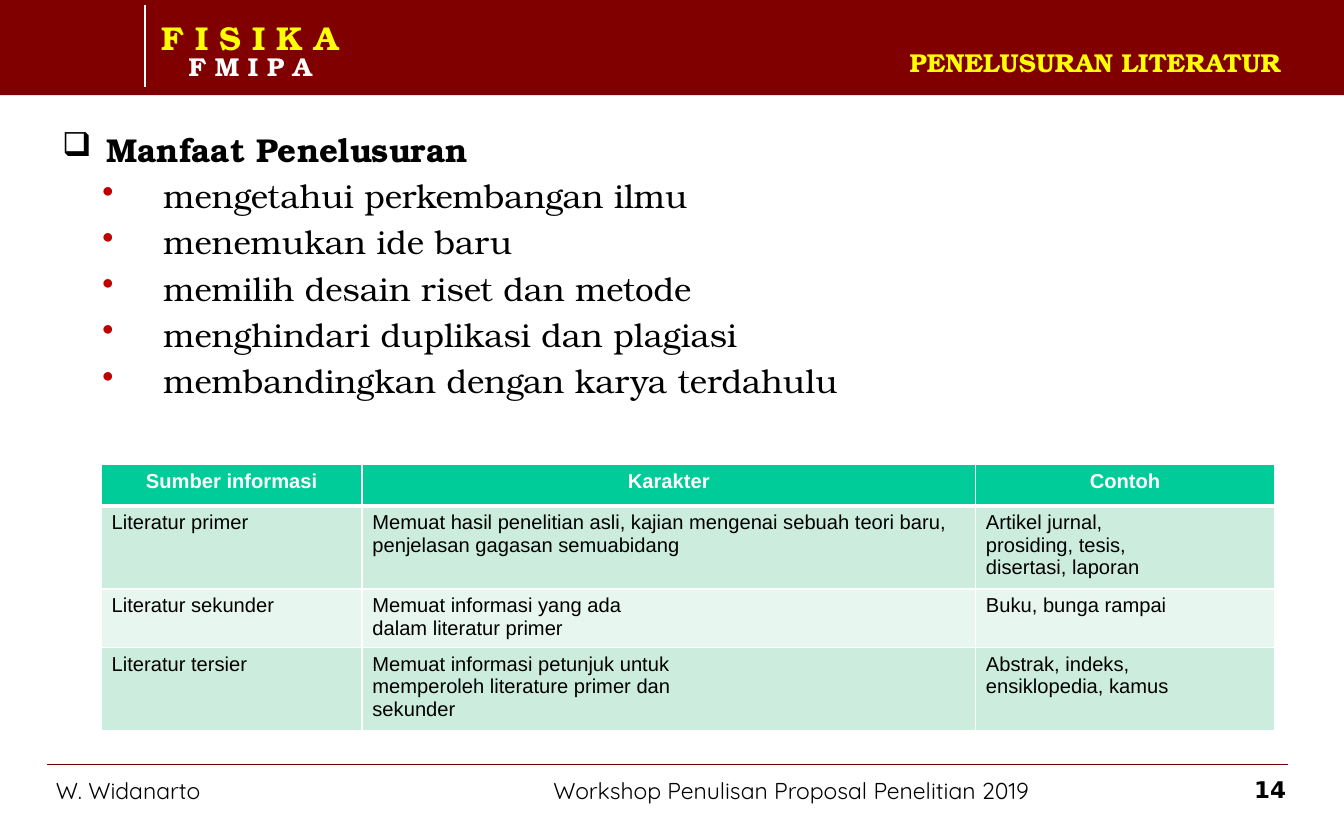
"""Build the literature-search slide with its benefits list and source table."""
from dataclasses import dataclass

from lxml.etree import SubElement
from pptx import Presentation
from pptx.dml.color import RGBColor as RGB
from pptx.enum.shapes import MSO_CONNECTOR as Connector, MSO_SHAPE as Shape
from pptx.enum.text import MSO_ANCHOR as Anchor, PP_ALIGN as Align
from pptx.oxml.ns import qn
from pptx.util import Inches, Pt


@dataclass(frozen=True)
class Theme:
    maroon: str = "800000"
    rule: str = "640000"
    yellow: str = "FFFF00"
    white: str = "FFFFFF"
    black: str = "000000"
    bullet: str = "C00000"
    header: str = "00CC99"
    bands: tuple = ("CCECDE", "E7F6EF")
    serif: str = "TeX Gyre Bonum"
    sans: str = "Arial"
    footer: str = "Quicksand"
    number: str = "DejaVu Sans"
    large: int = 23
    medium: int = 18
    small: int = 16
    cell: int = 14


theme = Theme()


def write(frame, text, *, font, size, color=theme.black, bold=False, align=Align.LEFT,
          spacing=None, before=0, bullet=None, bullet_color=theme.black, indent=(0, 0)):
    """Write one paragraph, filling the first one while it is empty."""
    line = frame.paragraphs[0]
    if line.runs:
        line = frame.add_paragraph()
        line.space_before = Pt(before)
    if bullet:
        props = line._p.get_or_add_pPr()
        props.set("marL", str(Inches(indent[0])))
        props.set("indent", str(Inches(indent[1])))
        SubElement(SubElement(props, qn("a:buClr")), qn("a:srgbClr"), val=bullet_color)
        SubElement(props, qn("a:buChar"), char=bullet)
    line.alignment = align
    if spacing:
        line.line_spacing = spacing
    run = line.add_run()
    run.text = text
    run.font.name, run.font.size, run.font.bold = font, Pt(size), bold
    run.font.color.rgb = RGB.from_string(color)


def add_frame(left, top, width, height, margins=(0.11, 0.06), wrap=True):
    """Add a text box and return its text frame."""
    frame = slide.shapes.add_textbox(*map(Inches, (left, top, width, height))).text_frame
    frame.margin_left = frame.margin_right = Inches(margins[0])
    frame.margin_top = frame.margin_bottom = Inches(margins[1])
    frame.word_wrap = wrap
    return frame


deck = Presentation()
deck.slide_width, deck.slide_height = Inches(12.99), Inches(8.03)
slide = deck.slides.add_slide(deck.slide_layouts[6])

banner = slide.shapes.add_shape(Shape.RECTANGLE, Inches(-0.01), 0, Inches(13.01), Inches(0.92))
banner.shadow.inherit = False
banner.fill.solid()
banner.fill.fore_color.rgb = RGB.from_string(theme.maroon)
banner.line.fill.background()

for ends, color, weight in [((0.45, 7.39, 12.45, 7.39), theme.rule, 1),
                            ((1.4, 0.05, 1.4, 0.84), theme.white, 1.5)]:
    rule = slide.shapes.add_connector(Connector.STRAIGHT, *map(Inches, ends))
    rule.line.color.rgb = RGB.from_string(color)
    rule.line.width = Pt(weight)
    SubElement(rule._element.spPr, qn("a:effectLst"))

department = add_frame(1.56, 0.24, 1.73, 0.55, margins=(0, 0), wrap=False)
write(department, "F I S I K A", font=theme.serif, size=theme.large, color=theme.yellow,
      bold=True, spacing=0.8)
write(department, "F M I P A", font=theme.serif, size=theme.medium, color=theme.white,
      bold=True, align=Align.CENTER, spacing=0.8)

title = add_frame(4.92, 0.33, 7.57, 0.54)
title.vertical_anchor = Anchor.MIDDLE
write(title, "PENELUSURAN LITERATUR", font=theme.serif, size=theme.medium,
      color=theme.yellow, bold=True, align=Align.RIGHT)

benefits = add_frame(0.49, 1.19, 11.99, 3.1)
write(benefits, "Manfaat Penelusuran", font=theme.serif, size=theme.large, bold=True,
      bullet="❑", indent=(0.43, -0.43))
for benefit in ["mengetahui perkembangan ilmu", "menemukan ide baru",
                "memilih desain riset dan metode", "menghindari duplikasi dan plagiasi",
                "membandingkan dengan karya terdahulu"]:
    write(benefits, benefit, font=theme.serif, size=theme.large, before=4.6,
          bullet="•", bullet_color=theme.bullet, indent=(0.98, -0.59))

sources = [
    ["Sumber informasi", "Karakter", "Contoh"],
    ["Literatur primer",
     "Memuat hasil penelitian asli, kajian mengenai sebuah teori baru, "
     "penjelasan gagasan semuabidang",
     "Artikel jurnal,\nprosiding, tesis,\ndisertasi, laporan"],
    ["Literatur sekunder", "Memuat informasi yang ada\ndalam literatur primer",
     "Buku, bunga rampai"],
    ["Literatur tersier",
     "Memuat informasi petunjuk untuk\nmemperoleh literature primer dan\nsekunder",
     "Abstrak, indeks,\nensiklopedia, kamus"],
]
column_widths = [2.52, 5.93, 2.89]
row_heights = [0.4, 0.76, 0.54, 0.76]
table = slide.shapes.add_table(len(sources), len(column_widths), Inches(0.98), Inches(4.49),
                               Inches(sum(column_widths)), Inches(sum(row_heights))).table
for column, width in zip(table.columns, column_widths):
    column.width = Inches(width)
for row, height in zip(table.rows, row_heights):
    row.height = Inches(height)

for r, entries in enumerate(sources):
    is_header = r == 0
    borders = {"lnL": 1, "lnR": 1, "lnT": 3 if r == 1 else 1, "lnB": 3 if is_header else 1}
    for c, entry in enumerate(entries):
        cell = table.cell(r, c)
        for side, weight in borders.items():
            edge = SubElement(cell._tc.get_or_add_tcPr(), qn(f"a:{side}"), w=str(Pt(weight)))
            SubElement(SubElement(edge, qn("a:solidFill")), qn("a:srgbClr"), val=theme.white)
        cell.fill.solid()
        cell.fill.fore_color.rgb = RGB.from_string(
            theme.header if is_header else theme.bands[(r - 1) % 2])
        for text in entry.split("\n"):
            write(cell.text_frame, text, font=theme.sans, size=theme.cell, bold=is_header,
                  color=theme.white if is_header else theme.black,
                  align=Align.CENTER if is_header else Align.LEFT)

for text, left, width in [("W. Widanarto", 0.43, 1.72),
                          ("Workshop Penulisan Proposal Penelitian 2019", 5.24, 5.13)]:
    write(add_frame(left, 7.5, width, 0.33, wrap=False), text, font=theme.footer,
          size=theme.small, spacing=0.8)

write(add_frame(11.79, 7.43, 0.64, 0.45, margins=(0, 0.06)), "14", font=theme.number,
      size=theme.small, bold=True, align=Align.RIGHT)

deck.save("out.pptx")
